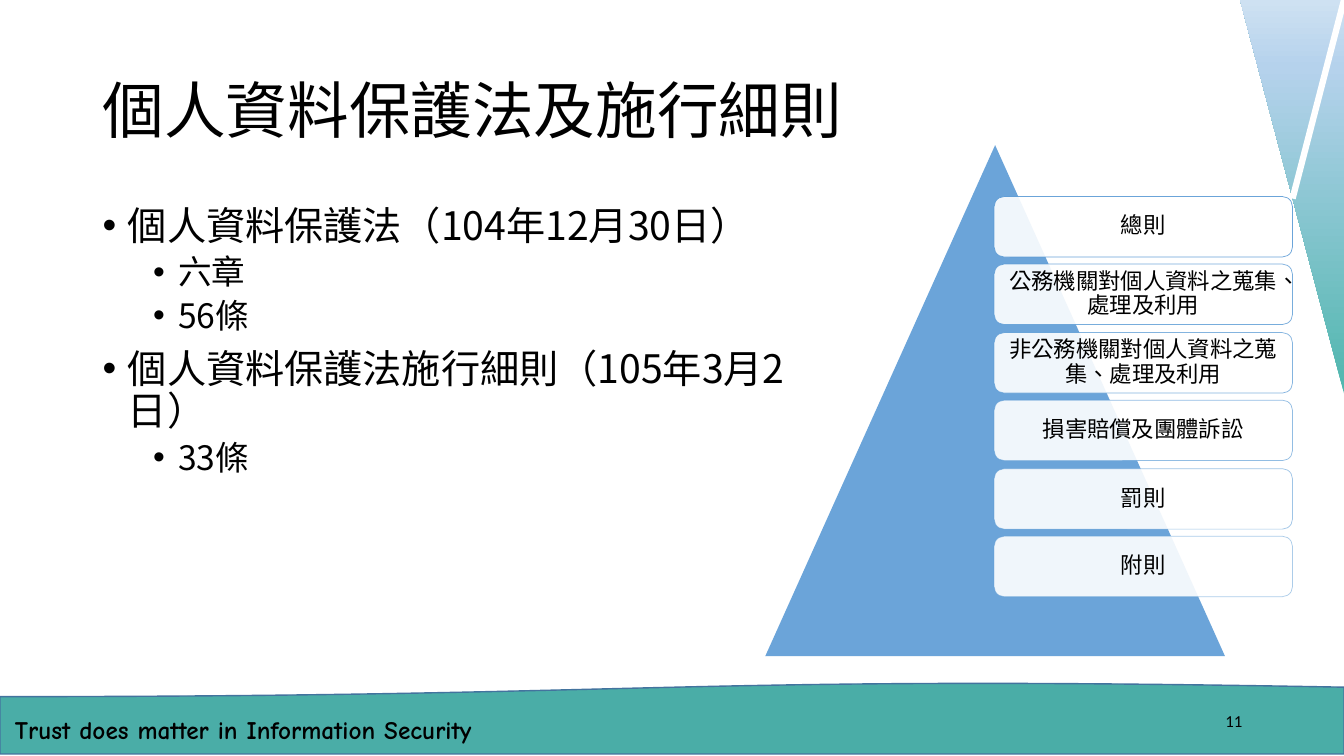
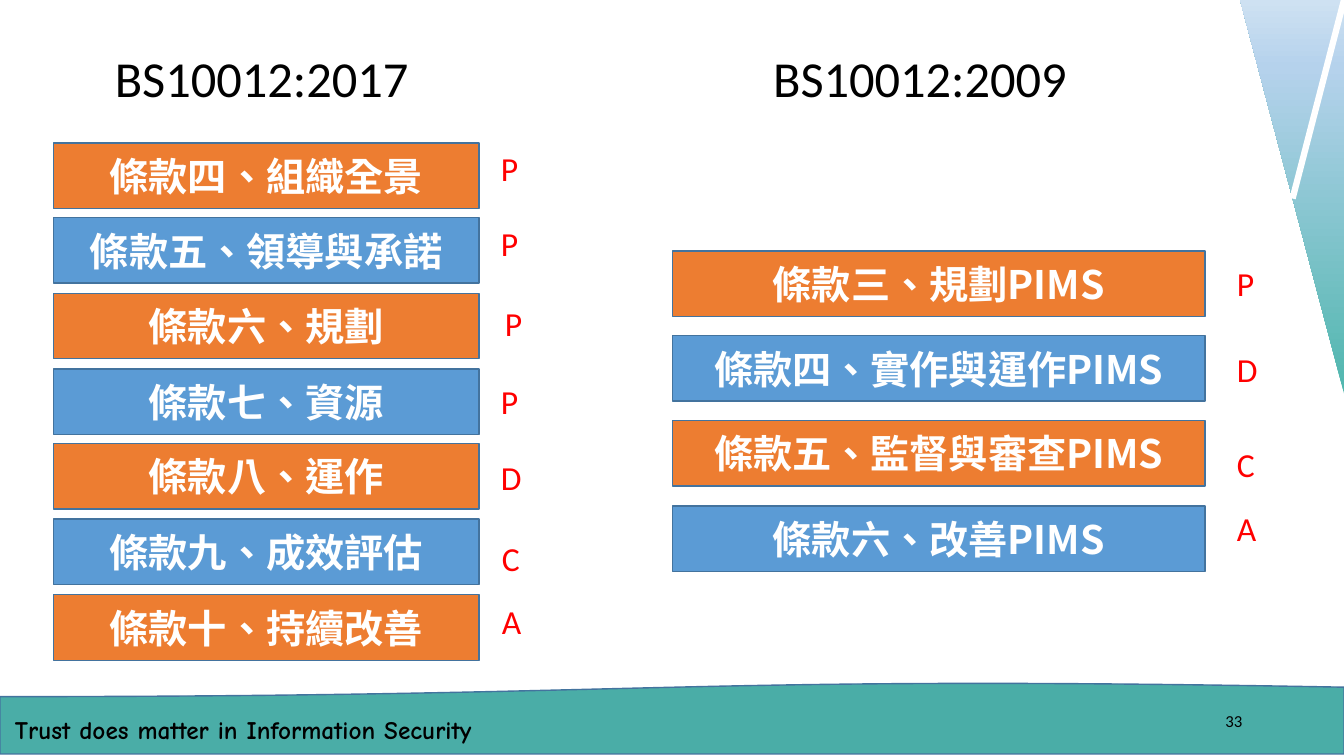
from lxml import etree
from pptx import Presentation
from pptx.dml.color import RGBColor
from pptx.enum.shapes import MSO_CONNECTOR, MSO_SHAPE
from pptx.enum.text import MSO_ANCHOR, PP_ALIGN
from pptx.oxml.ns import qn
from pptx.util import Emu, Pt

RECTANGLE = MSO_SHAPE.RECTANGLE
ROUNDED = MSO_SHAPE.ROUNDED_RECTANGLE
TRIANGLE = MSO_SHAPE.ISOSCELES_TRIANGLE
RIGHT_TRIANGLE = MSO_SHAPE.RIGHT_TRIANGLE
WAVE = MSO_SHAPE.FLOWCHART_DOCUMENT
STRAIGHT = MSO_CONNECTOR.STRAIGHT
TOP, MIDDLE = MSO_ANCHOR.TOP, MSO_ANCHOR.MIDDLE
LEFT, CENTER, RIGHT = PP_ALIGN.LEFT, PP_ALIGN.CENTER, PP_ALIGN.RIGHT

EMU_PER_PX = 9144  # 100 px to the inch
COLORS = {
    "black": "000000", "white": "FFFFFF", "red": "FF0000",
    "blue": "5B9BD5", "orange": "ED7D31", "outline": "43739E",
    "band": "4AADA7",
}
CORNER_STOPS = [(0, "4FB6AD"), (83, "B5D2EC"), (100, "CEE1F2")]
CJK, LATIN, HAND = "Noto Sans CJK SC", "Calibri", "Comic Neue"


def px(value):
    return Emu(value * EMU_PER_PX)


def color(name):
    return RGBColor.from_string(COLORS[name])


def set_alpha(parent, percent):
    """Make the first solid colour under parent partly transparent."""
    solid = next(parent.iter(qn("a:srgbClr")))
    etree.SubElement(solid, qn("a:alpha")).set("val", str(percent * 1000))


def add_run(paragraph, text, size, font, color_name="black", bold=False):
    run = paragraph.add_run()
    run.text = text
    run.font.size = Pt(size)
    run.font.name = font
    run.font.bold = bold
    run.font.color.rgb = color(color_name)
    if font == CJK:
        properties = run.font._element
        properties.set("lang", "zh-TW")
        etree.SubElement(properties, qn("a:ea")).set("typeface", font)


def add_text(slide, box, text, size, font, color_name="black", bold=False,
             align=LEFT, anchor=TOP, line_spacing=1.0):
    frame = slide.shapes.add_textbox(*map(px, box)).text_frame
    frame.word_wrap = True
    frame.vertical_anchor = anchor
    paragraph = frame.paragraphs[0]
    paragraph.alignment = align
    paragraph.line_spacing = line_spacing
    add_run(paragraph, text, size, font, color_name, bold)


def add_shape(slide, kind, box, fill, line=None, line_width=1):
    shape = slide.shapes.add_shape(kind, *map(px, box))
    shape.shadow.inherit = False
    shape.fill.solid()
    shape.fill.fore_color.rgb = color(fill)
    if line:
        shape.line.color.rgb = color(line)
        shape.line.width = Pt(line_width)
    else:
        shape.line.fill.background()
    return shape


def add_label(shape, text, size, color_name, bold=False, line_spacing=1.0):
    frame = shape.text_frame
    frame.word_wrap = True
    frame.vertical_anchor = MIDDLE
    paragraph = frame.paragraphs[0]
    paragraph.alignment = CENTER
    paragraph.line_spacing = line_spacing
    add_run(paragraph, text, size, CJK, color_name, bold)


def set_gradient(shape, stops):
    """Replace the solid fill with a vertical gradient."""
    properties = shape._element.spPr
    gradient = etree.Element(qn("a:gradFill"), rotWithShape="1")
    stop_list = etree.SubElement(gradient, qn("a:gsLst"))
    for position, value in stops:
        stop = etree.SubElement(stop_list, qn("a:gs"), pos=str(position * 1000))
        etree.SubElement(stop, qn("a:srgbClr"), val=value)
    etree.SubElement(gradient, qn("a:lin"), ang="5400000", scaled="0")
    properties.replace(properties.find(qn("a:solidFill")), gradient)


def add_bullets(slide, box, items):
    """Items are (level, text) pairs."""
    frame = slide.shapes.add_textbox(*map(px, box)).text_frame
    frame.word_wrap = True
    for index, (level, text) in enumerate(items):
        paragraph = frame.add_paragraph() if index else frame.paragraphs[0]
        paragraph.level = level
        paragraph.line_spacing = 0.9
        if index:
            paragraph.space_before = Pt(5 if level else 10)
        properties = paragraph._p.get_or_add_pPr()
        properties.set("marL", str(px(75 if level else 25)))
        properties.set("indent", str(px(-25)))
        etree.SubElement(properties, qn("a:buFont")).set("typeface", "Arial")
        etree.SubElement(properties, qn("a:buChar")).set("char", "•")
        add_run(paragraph, text, 24 if level else 28, CJK)


def new_slide(presentation, number):
    """Blank slide with the shared corner, band and footer."""
    slide = presentation.slides.add_slide(presentation.slide_layouts[6])
    # Corner decoration
    corner = add_shape(slide, RIGHT_TRIANGLE, (1230, 0, 104, 394), "blue")
    corner.rotation = 180
    set_gradient(corner, CORNER_STOPS)
    stripe = slide.shapes.add_connector(
        STRAIGHT, px(1333), px(0), px(1282), px(197))
    stripe.line.color.rgb = color("white")
    stripe.line.width = Pt(4.5)
    etree.SubElement(stripe._element.spPr, qn("a:effectLst"))
    # Band and footer
    band = add_shape(slide, WAVE, (0, 677, 1333, 71), "band", "outline")
    band.rotation = 180
    add_text(slide, (5, 704, 562, 40),
             "Trust does matter in Information Security", 18, HAND, bold=True)
    add_text(slide, (942, 695, 300, 40), str(number), 12, LATIN,
             align=RIGHT, anchor=MIDDLE)
    return slide


def add_pyramid(slide, chapters):
    """Triangle with evenly spaced chapter boxes over it."""
    triangle = add_shape(slide, TRIANGLE, (759, 144, 456, 507), "blue")
    set_alpha(triangle._element.spPr, 90)
    for index, chapter in enumerate(chapters):
        top = 195 + index * 135 // 2
        box = add_shape(slide, ROUNDED, (986, top, 296, 60),
                        "white", "blue", 0.5)
        properties = box._element.spPr
        set_alpha(properties, 90)
        set_alpha(properties.find(qn("a:ln")), 90 - 8 * index)
        frame = box.text_frame
        frame.margin_left = frame.margin_right = px(7)
        frame.margin_top = frame.margin_bottom = px(7)
        add_label(box, chapter, 16, "black", line_spacing=0.9)


def add_clauses(slide, left, width, top, span, clauses):
    """Bars spread over span; clauses are (text, letter, letter x, letter y)."""
    for index, (text, letter, letter_x, letter_y) in enumerate(clauses):
        bar_top = top + index * span // (len(clauses) - 1)
        fill = "blue" if index % 2 else "orange"
        bar = add_shape(slide, RECTANGLE, (left, bar_top, width, 65),
                        fill, "outline")
        add_label(bar, text, 28, "white", bold=True)
        add_text(slide, (letter_x, letter_y, 50, 50), letter, 24, LATIN, "red")


def build_law_slide(presentation):
    slide = new_slide(presentation, 11)
    add_text(slide, (92, 40, 1150, 145), "個人資料保護法及施行細則", 44, CJK,
             anchor=MIDDLE, line_spacing=0.9)
    add_bullets(slide, (92, 200, 735, 264), [
        (0, "個人資料保護法（104年12月30日）"),
        (1, "六章"),
        (1, "56條"),
        (0, "個人資料保護法施行細則（105年3月2日）"),
        (1, "33條"),
    ])
    add_pyramid(slide, [
        "總則", "公務機關對個人資料之蒐集、處理及利用",
        "非公務機關對個人資料之蒐集、處理及利用",
        "損害賠償及團體訴訟", "罰則", "附則",
    ])


def build_standard_slide(presentation):
    slide = new_slide(presentation, 33)
    for left, heading in ((104, "BS10012:2017"), (757, "BS10012:2009")):
        add_text(slide, (left, 42, 320, 71), heading, 36, LATIN)
    add_clauses(slide, 53, 422, 142, 448, [
        ("條款四、組織全景", "P", 487, 142),
        ("條款五、領導與承諾", "P", 487, 216),
        ("條款六、規劃", "P", 491, 296),
        ("條款七、資源", "P", 487, 373),
        ("條款八、運作", "D", 487, 448),
        ("條款九、成效評估", "C", 488, 529),
        ("條款十、持續改善", "A", 488, 591),
    ])
    add_clauses(slide, 667, 528, 249, 253, [
        ("條款三、規劃PIMS", "P", 1217, 256),
        ("條款四、實作與運作PIMS", "D", 1217, 341),
        ("條款五、監督與審查PIMS", "C", 1217, 435),
        ("條款六、改善PIMS", "A", 1217, 499),
    ])


def main():
    presentation = Presentation()
    presentation.slide_width = px(1333)
    presentation.slide_height = px(750)
    build_law_slide(presentation)
    build_standard_slide(presentation)
    presentation.save("out.pptx")


if __name__ == "__main__":
    main()
